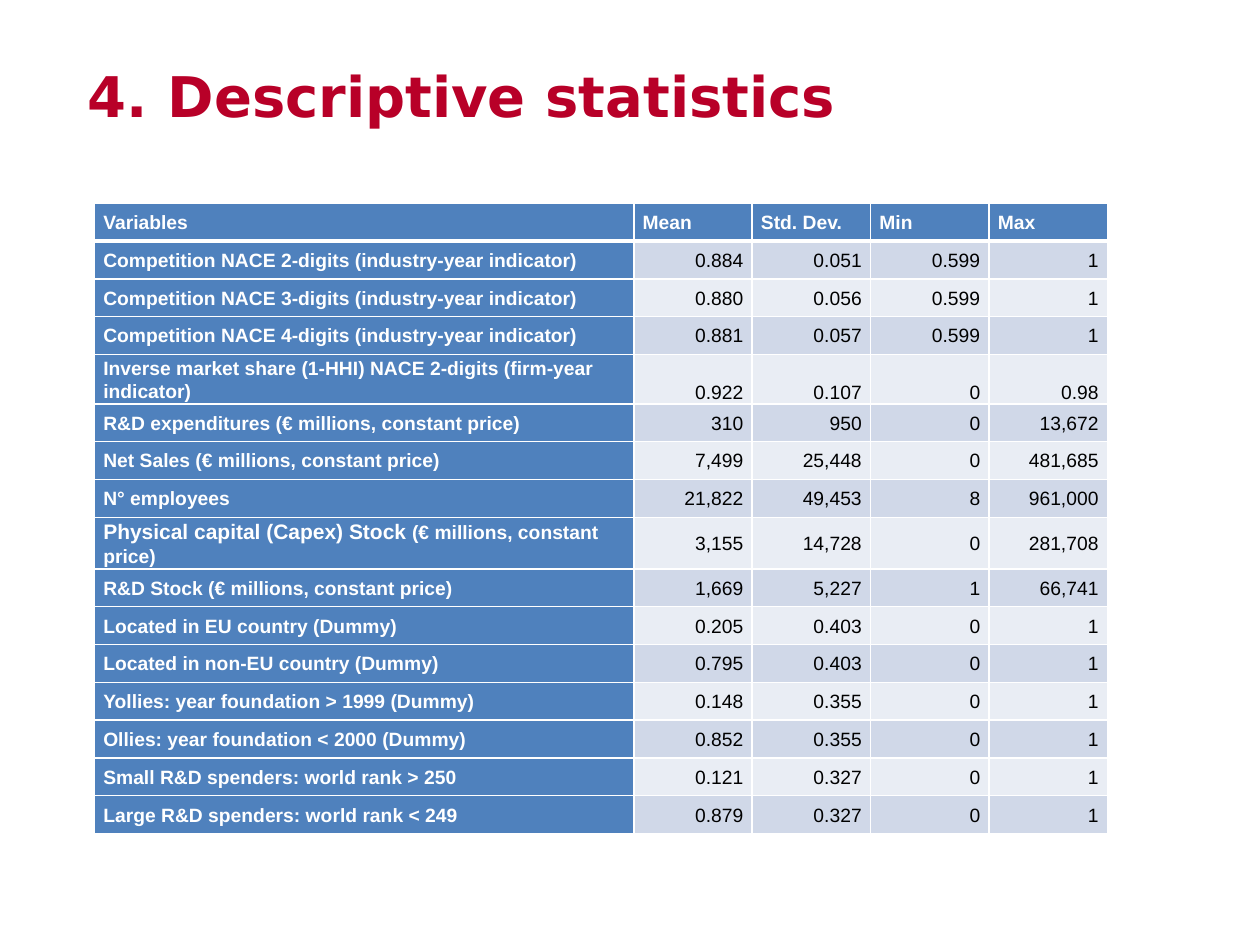
import pptx
import pptx.dml.color
import pptx.enum.text
import pptx.oxml.ns
import pptx.util
from lxml import etree

RGBColor = pptx.dml.color.RGBColor
Anchor = pptx.enum.text.MSO_ANCHOR
Align = pptx.enum.text.PP_ALIGN

CRIMSON = RGBColor(0xB8, 0x00, 0x28)
BLUE = RGBColor(0x4F, 0x81, 0xBD)
DARK_BAND = RGBColor(0xD0, 0xD8, 0xE8)
LIGHT_BAND = RGBColor(0xE9, 0xED, 0xF4)
WHITE = RGBColor(0xFF, 0xFF, 0xFF)
BLACK = RGBColor(0x00, 0x00, 0x00)

HEADINGS = ["Variables", "Mean", "Std. Dev.", "Min", "Max"]
CAPITAL = "Physical capital (Capex) Stock"
INVERSE_SHARE = "Inverse market share (1-HHI) NACE 2-digits (firm-year indicator)"
STATISTICS = [
    ["Competition NACE 2-digits (industry-year indicator)", "0.884", "0.051", "0.599", "1"],
    ["Competition NACE 3-digits (industry-year indicator)", "0.880", "0.056", "0.599", "1"],
    ["Competition NACE 4-digits (industry-year indicator)", "0.881", "0.057", "0.599", "1"],
    [INVERSE_SHARE, "0.922", "0.107", "0", "0.98"],
    ["R&D expenditures (€ millions, constant price)", "310", "950", "0", "13,672"],
    ["Net Sales (€ millions, constant price)", "7,499", "25,448", "0", "481,685"],
    ["N° employees", "21,822", "49,453", "8", "961,000"],
    [CAPITAL + " (€ millions, constant price)", "3,155", "14,728", "0", "281,708"],
    ["R&D Stock (€ millions, constant price)", "1,669", "5,227", "1", "66,741"],
    ["Located in EU country (Dummy)", "0.205", "0.403", "0", "1"],
    ["Located in non-EU country (Dummy)", "0.795", "0.403", "0", "1"],
    ["Yollies: year foundation > 1999 (Dummy)", "0.148", "0.355", "0", "1"],
    ["Ollies: year foundation < 2000 (Dummy)", "0.852", "0.355", "0", "1"],
    ["Small R&D spenders: world rank > 250", "0.121", "0.327", "0", "1"],
    ["Large R&D spenders: world rank < 249", "0.879", "0.327", "0", "1"],
]


class StatisticsSlide:
    """Holds the slide and its style; lengths are shares of the slide's size."""

    title_font, title_size = "DejaVu Sans", 32
    body_font, body_size, large_size = "Arial", 11, 12
    inset = pptx.util.Inches(0.07)
    line_spacing = 1.07
    label_width, value_width, row_height = 0.428, 0.094, 0.04

    def __init__(self, deck):
        self.width, self.height = deck.slide_width, deck.slide_height
        self.slide = deck.slides.add_slide(deck.slide_layouts[6])

    def place(self, left, top, width, height):
        return (int(left * self.width), int(top * self.height),
                int(width * self.width), int(height * self.height))

    def add_words(self, paragraph, words, font, size, color, bold):
        run = paragraph.add_run()
        run.text = words
        run.font.name = font
        run.font.size = pptx.util.Pt(size)
        run.font.bold = bold
        run.font.color.rgb = color

    def title(self, words, left, top, width, height):
        frame = self.slide.shapes.add_textbox(*self.place(left, top, width, height)).text_frame
        frame.word_wrap = True
        frame.vertical_anchor = Anchor.TOP
        frame.margin_top = pptx.util.Inches(0.11)
        self.add_words(frame.paragraphs[0], words, self.title_font, self.title_size, CRIMSON, True)

    def border(self, cell, side, points):
        line = etree.SubElement(cell._tc.get_or_add_tcPr(), pptx.oxml.ns.qn("a:ln" + side),
                                w=str(pptx.util.Pt(points)))
        solid = etree.SubElement(line, pptx.oxml.ns.qn("a:solidFill"))
        etree.SubElement(solid, pptx.oxml.ns.qn("a:srgbClr"), val=str(WHITE))

    def cell(self, cell, words, row, column):
        heading = row == 0 or column == 0
        cell.margin_left = cell.margin_right = self.inset
        cell.margin_top = cell.margin_bottom = 0
        low = words[0] == INVERSE_SHARE and not heading
        cell.vertical_anchor = Anchor.BOTTOM if low else Anchor.MIDDLE
        for side in "LRTB":
            under_header = (row, side) in ((0, "B"), (1, "T"))
            self.border(cell, side, 3 if under_header else 1)
        cell.fill.solid()
        cell.fill.fore_color.rgb = BLUE if heading else DARK_BAND if row % 2 else LIGHT_BAND

        paragraph = cell.text_frame.paragraphs[0]
        paragraph.line_spacing = self.line_spacing
        paragraph.alignment = Align.LEFT if heading else Align.RIGHT
        color = WHITE if heading else BLACK
        rest = words[column]
        if rest.startswith(CAPITAL):
            self.add_words(paragraph, CAPITAL, self.body_font, self.large_size, color, heading)
            rest = rest[len(CAPITAL):]
        self.add_words(paragraph, rest, self.body_font, self.body_size, color, heading)

    def table(self, rows, left, top):
        widths = [self.label_width] + [self.value_width] * (len(rows[0]) - 1)
        area = self.place(left, top, sum(widths), self.row_height * len(rows))
        table = self.slide.shapes.add_table(len(rows), len(widths), *area).table
        for column, share in zip(table.columns, widths):
            column.width = int(share * self.width)
        for row, words in enumerate(rows):
            table.rows[row].height = int(self.row_height * self.height)
            for column in range(len(words)):
                self.cell(table.cell(row, column), words, row, column)


def main():
    deck = pptx.Presentation()
    deck.slide_width = pptx.util.Inches(10)
    deck.slide_height = pptx.util.Inches(7.5)
    page = StatisticsSlide(deck)
    page.title("4. Descriptive statistics", 0.06, 0.05, 0.91, 0.17)
    page.table([HEADINGS] + STATISTICS, 0.075, 0.215)
    deck.save("out.pptx")


if __name__ == "__main__":
    main()
